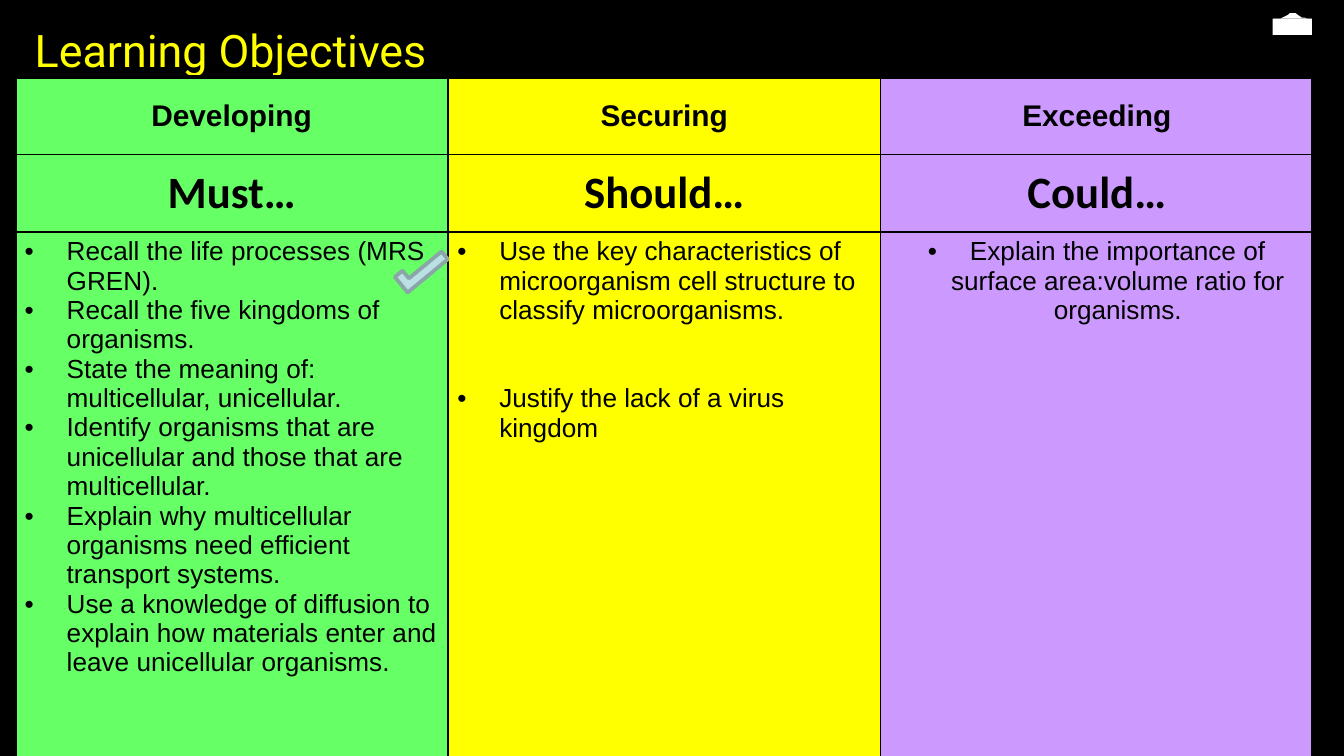
import pptx
import pptx.dml.color
import pptx.enum.shapes
import pptx.enum.text
import pptx.oxml.ns
import pptx.util
from lxml import etree

Pt = pptx.util.Pt
SHAPE = pptx.enum.shapes.MSO_SHAPE
ANCHOR = pptx.enum.text.MSO_ANCHOR
ALIGN = pptx.enum.text.PP_ALIGN
qn = pptx.oxml.ns.qn

BLACK, WHITE, YELLOW = "000000", "FFFFFF", "FFFF00"
COLUMN_FILLS = ["66FF66", YELLOW, "CC99FF"]
COLUMN_WIDTH = 231.75
ROW_HEIGHTS = [41.5, 41.5, 282]
HEADINGS = [
    (["Developing", "Securing", "Exceeding"], {"size": Pt(16), "name": "Arial", "bold": True}),
    (["Must…", "Should…", "Could…"], {"size": Pt(24), "name": "Calibri", "bold": True}),
]
BODY = {"size": Pt(14), "name": "Arial", "bold": False}
OBJECTIVES = [
    [
        "Recall the life processes (MRS GREN).",
        "Recall the five kingdoms of organisms.",
        "State the meaning of: multicellular, unicellular.",
        "Identify organisms that are unicellular and those that are multicellular.",
        "Explain why multicellular organisms need efficient transport systems.",
        "Use a knowledge of diffusion to explain how materials enter and leave unicellular organisms.",
    ],
    [
        "Use the key characteristics of microorganism cell structure to classify microorganisms.",
        "Justify the lack of a virus kingdom",
    ],
    ["Explain the importance of surface area:volume ratio for organisms."],
]
OBJECTIVE_ALIGN = [ALIGN.LEFT, ALIGN.LEFT, ALIGN.CENTER]
OBJECTIVE_GAPS = [0, 31.5, 0]
CLOUD_TOP = [(682.5, 10), (686, 10), (690, 8), (691, 7), (694, 7), (696, 8.5),
             (697.5, 9.5), (699, 9.5), (700.5, 10), (702.5, 10)]


def rgb(value):
    return pptx.dml.color.RGBColor.from_string(value)


def paint(fill, color):
    fill.solid()
    fill.fore_color.rgb = rgb(color)


def set_attributes(target, values):
    for name, value in values.items():
        setattr(target, name, value)


def add_run(p, text, color, font):
    r = p.add_run()
    r.text = text
    set_attributes(r.font, font)
    r.font.color.rgb = rgb(color)


def add_title(slide, text):
    tf = slide.shapes.add_textbox(Pt(11.5), Pt(8.5), Pt(517), Pt(65.5)).text_frame
    tf.word_wrap = True
    add_run(tf.paragraphs[0], text, YELLOW, {"size": Pt(24), "name": "Roboto"})


def set_bullet(p):
    pPr = p._p.get_or_add_pPr()
    pPr.set("marL", str(Pt(22.5)))
    pPr.set("indent", str(-Pt(22.5)))
    etree.SubElement(pPr, qn("a:buFont")).set("typeface", "Arial")
    etree.SubElement(pPr, qn("a:buChar")).set("char", "•")


def set_borders(cell, widths):
    """Put black borders before the fill, as the schema orders them."""
    tcPr = cell._tc.get_or_add_tcPr()
    for i, (side, width) in enumerate(widths.items()):
        ln = etree.Element(qn(f"a:ln{side}"), w=str(Pt(width)))
        fill = etree.SubElement(ln, qn("a:solidFill"))
        etree.SubElement(fill, qn("a:srgbClr")).set("val", BLACK)
        tcPr.insert(i, ln)


def format_cell(cell, row, col):
    set_attributes(cell, {"margin_left": Pt(5), "margin_right": Pt(5),
                          "margin_top": Pt(2.75), "margin_bottom": Pt(2.75)})
    paint(cell.fill, COLUMN_FILLS[col])
    outer = {"L": col == 0, "R": col == 2, "T": row == 0, "B": row == 2}
    set_borders(cell, {side: 2.25 if edge else 1 for side, edge in outer.items()})


def fill_heading(cell, text, font):
    cell.vertical_anchor = ANCHOR.MIDDLE
    p = cell.text_frame.paragraphs[0]
    p.alignment = ALIGN.CENTER
    add_run(p, text, BLACK, font)


def fill_objectives(cell, items, align, gap):
    tf = cell.text_frame
    for i, text in enumerate(items):
        p = tf.add_paragraph() if i else tf.paragraphs[0]
        p.alignment = align
        if i and gap:
            p.space_before = Pt(gap)
        set_bullet(p)
        add_run(p, text, BLACK, BODY)


def add_objectives_table(slide):
    table = slide.shapes.add_table(3, 3, Pt(8.25), Pt(41.25), Pt(3 * COLUMN_WIDTH),
                                   Pt(sum(ROW_HEIGHTS))).table
    for column in table.columns:
        column.width = Pt(COLUMN_WIDTH)
    for row, height in enumerate(ROW_HEIGHTS):
        table.rows[row].height = Pt(height)
        for col in range(3):
            cell = table.cell(row, col)
            format_cell(cell, row, col)
            if row < len(HEADINGS):
                texts, font = HEADINGS[row]
                fill_heading(cell, texts[col], font)
            else:
                fill_objectives(cell, OBJECTIVES[col], OBJECTIVE_ALIGN[col], OBJECTIVE_GAPS[col])


def style_shape(s, fill, line=None):
    s.shadow.inherit = False
    paint(s.fill, fill)
    if line:
        paint(s.line.fill, line)
        s.line.width = Pt(2)
    else:
        s.line.fill.background()


def add_cloud(slide):
    shapes = slide.shapes.add_group_shape().shapes
    style_shape(shapes.add_shape(SHAPE.RECTANGLE, Pt(681.75), Pt(10), Pt(21), Pt(8.75)), WHITE)
    points = [(Pt(x), Pt(y)) for x, y in CLOUD_TOP]
    builder = shapes.build_freeform(*points[0])
    builder.add_line_segments(points[1:], close=True)
    style_shape(builder.convert_to_shape(), WHITE)


def add_tick(slide):
    s = slide.shapes.add_shape(SHAPE.CORNER, Pt(211.75), Pt(138.25), Pt(28), Pt(10.75))
    s.rotation = 320.5
    style_shape(s, "BBE0E3", "8AA6A8")


def main():
    prs = pptx.Presentation()
    prs.slide_width, prs.slide_height = Pt(720), Pt(405)
    slide = prs.slides.add_slide(prs.slide_layouts[6])
    paint(slide.background.fill, BLACK)
    add_title(slide, "Learning Objectives")
    add_objectives_table(slide)
    add_cloud(slide)
    add_tick(slide)
    prs.save("out.pptx")


if __name__ == "__main__":
    main()
